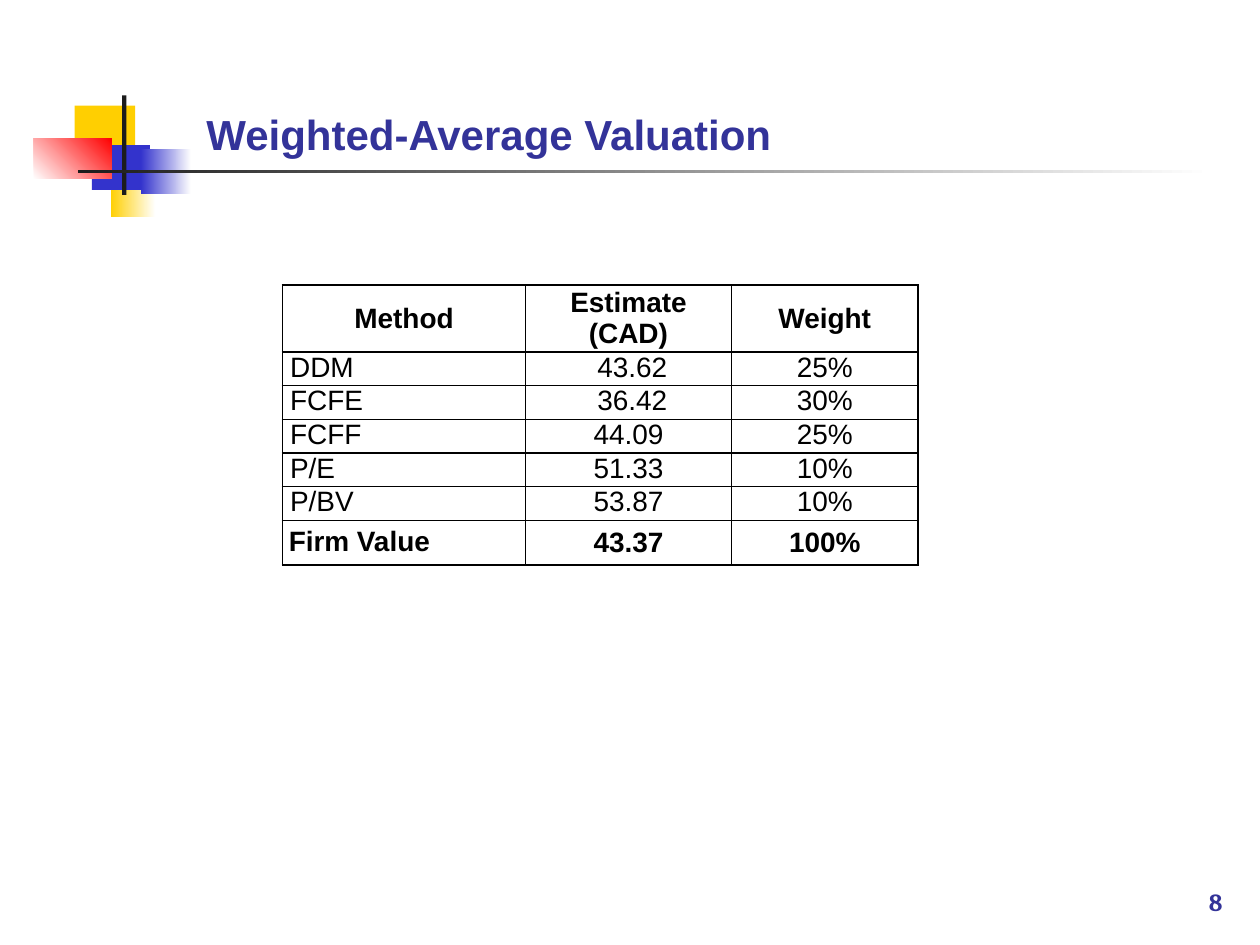
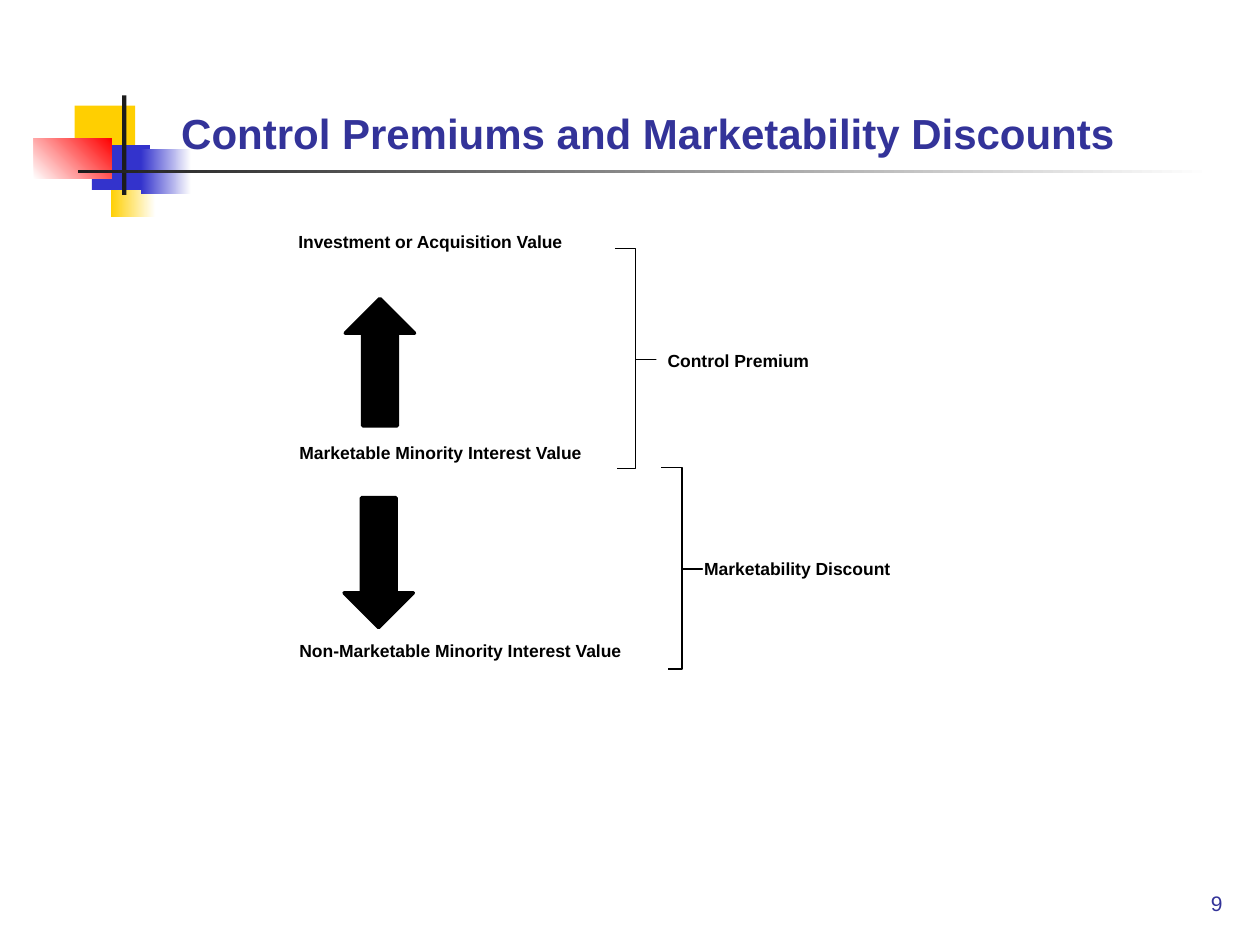
from lxml import etree
from pptx import Presentation
from pptx import util as u
from pptx.dml import color
from pptx.enum import shapes, text
from pptx.oxml import ns

Pt = u.Pt
BLACK, WHITE, NAVY = "000000", "FFFFFF", "333399"
GOLD, BLUE, RED, CHARCOAL = "FFCF01", "3333CC", "FF0000", "1C1C1C"
LEFT, CENTER, RIGHT = text.PP_ALIGN.LEFT, text.PP_ALIGN.CENTER, text.PP_ALIGN.RIGHT
TOP, MIDDLE, BOTTOM = text.MSO_ANCHOR.TOP, text.MSO_ANCHOR.MIDDLE, text.MSO_ANCHOR.BOTTOM
PRESET = shapes.MSO_SHAPE


def rgb(hex_string):
    return color.RGBColor.from_string(hex_string)


def write(frame, wording, size, ink=BLACK, bold=True, font="Arial", align=LEFT):
    """Fill a text frame, one paragraph per line of wording."""
    frame.text = wording
    frame.word_wrap = True
    for paragraph in frame.paragraphs:
        paragraph.alignment = align
        paragraph.font.name = font
        paragraph.font.size = Pt(size)
        paragraph.font.bold = bold
        paragraph.font.color.rgb = rgb(ink)


def add_preset(slide, preset, place, fill=None, line=None, weight=0.75):
    """Add a shape; a fill of two colours is a gradient."""
    shape = slide.shapes.add_shape(preset, *map(Pt, place))
    shape.shadow.inherit = False
    if fill is None:
        shape.fill.background()
    elif isinstance(fill, tuple):
        shape.fill.gradient()
        for stop, shade in zip(shape.fill.gradient_stops, fill):
            stop.color.rgb = rgb(shade)
    else:
        shape.fill.solid()
        shape.fill.fore_color.rgb = rgb(fill)
    if line:
        shape.line.color.rgb = rgb(line)
        shape.line.width = Pt(weight)
    else:
        shape.line.fill.background()
    return shape


presentation = Presentation()
presentation.slide_width, presentation.slide_height = Pt(720), Pt(540)

# Shared emblem, title and page number: (place, fill, gradient angle)
emblem = [
    ((63.2, 86.4, 25.6, 37.6), (GOLD, WHITE), 0),
    ((42.6, 60.4, 34.6, 25.4), GOLD, None),
    ((52.5, 82.9, 33.2, 25.6), BLUE, None),
    ((80.6, 85, 28.8, 25.6), (BLUE, WHITE), 0),
    ((19.4, 78.9, 44.4, 23.4), (WHITE, RED), 45),
    ((69.8, 54.6, 2.4, 56.8), CHARCOAL, None),
    ((44.6, 97.1, 648, 1.7), (CHARCOAL, WHITE), 0),
]
headings = [
    ("Weighted-Average Valuation", (110.9, 52.6, 409, 41.8),
     "8", dict(size=14, bold=True, font="Cambria")),
    ("Control Premiums and Marketability Discounts", (96.5, 49, 549.4, 44.6),
     "9", dict(size=12, bold=False)),
]
slides = []
for title, title_place, page, page_style in headings:
    slide = presentation.slides.add_slide(presentation.slide_layouts[6])
    slides.append(slide)
    for place, fill, angle in emblem:
        part = add_preset(slide, PRESET.RECTANGLE, place, fill)
        if angle is not None:
            part.fill.gradient_angle = angle
    heading = slide.shapes.add_textbox(*map(Pt, title_place)).text_frame
    heading.vertical_anchor = BOTTOM
    write(heading, title, 24, NAVY)
    footer = slide.shapes.add_textbox(Pt(541.4), Pt(491), Pt(164.2), Pt(36)).text_frame
    footer.vertical_anchor = BOTTOM
    write(footer, page, ink=NAVY, align=RIGHT, **page_style)

valuation_slide, premium_slide = slides

# Valuation table
valuations = [
    ("Method", "Estimate\n(CAD)", "Weight"),
    ("DDM", "43.62", "25%"),
    ("FCFE", "36.42", "30%"),
    ("FCFF", "44.09", "25%"),
    ("P/E", "51.33", "10%"),
    ("P/BV", "53.87", "10%"),
    ("Firm Value", "43.37", "100%"),
]
column_widths = [139, 117.5, 106.8]
row_heights = [37.3] + [18.6] * 5 + [25.6]
total_row = len(valuations) - 1
table = valuation_slide.shapes.add_table(
    len(valuations), len(column_widths), Pt(161.4), Pt(162.8),
    Pt(sum(column_widths)), Pt(sum(row_heights))).table
table.first_row = table.horz_banding = False
for column, width in zip(table.columns, column_widths):
    column.width = Pt(width)
for r, (values, height) in enumerate(zip(valuations, row_heights)):
    table.rows[r].height = Pt(height)
    for c, value in enumerate(values):
        cell = table.cell(r, c)
        is_label = c == 0 and r > 0
        write(cell.text_frame, value, 16, bold=r in (0, total_row),
              align=LEFT if is_label else CENTER)
        cell.margin_left = cell.margin_right = cell.margin_top = cell.margin_bottom = 0
        cell.vertical_anchor = MIDDLE if r in (0, total_row) else TOP
        if is_label and r == total_row:
            cell.margin_left = cell.margin_top = Pt(3.6)
            cell.vertical_anchor = TOP
        elif is_label or (c == 1 and r in (1, 2)):
            cell.margin_left = Pt(4.4)
        properties = cell._tc.get_or_add_tcPr()
        for side in ("a:lnL", "a:lnR", "a:lnT", "a:lnB"):
            border = etree.SubElement(properties, ns.qn(side), w=str(Pt(1)))
            border_fill = etree.SubElement(border, ns.qn("a:solidFill"))
            etree.SubElement(border_fill, ns.qn("a:srgbClr"), val=BLACK)
        cell.fill.background()

# Premium and discount: braces with their names, then arrows between value levels
brackets = [
    ("Control Premium", (374.4, 196.6, 170, 31), (351.4, 141.9, 23.4, 126)),
    ("Marketability Discount", (395.3, 315.4, 129.6, 31), (378, 267.1, 23.4, 115.2)),
]
for name, name_place, brace_place in brackets:
    brace = add_preset(premium_slide, PRESET.RIGHT_BRACE, brace_place, line=BLACK)
    brace.adjustments[0], brace.adjustments[1] = 0, 0.504
    label = premium_slide.shapes.add_textbox(*map(Pt, name_place))
    write(label.text_frame, name, 10)

for place, rotation in [((197.3, 170.6, 39.6, 72.7), 180), ((196.6, 284.4, 39.6, 74.2), 0)]:
    arrow = add_preset(premium_slide, PRESET.DOWN_ARROW, place, BLACK, BLACK, 2)
    arrow.rotation = rotation

value_levels = [
    ("Investment or Acquisition Value", (163.4, 128.2, 181.4, 35.3)),
    ("Marketable Minority Interest Value", (164, 249.1, 188, 31.7)),
    ("Non-Marketable Minority Interest Value", (164, 362.2, 217.4, 34.6)),
]
for name, place in value_levels:
    level = add_preset(premium_slide, PRESET.RECTANGLE, place, WHITE, WHITE)
    level.text_frame.vertical_anchor = TOP
    write(level.text_frame, name, 10)

presentation.save("out.pptx")
